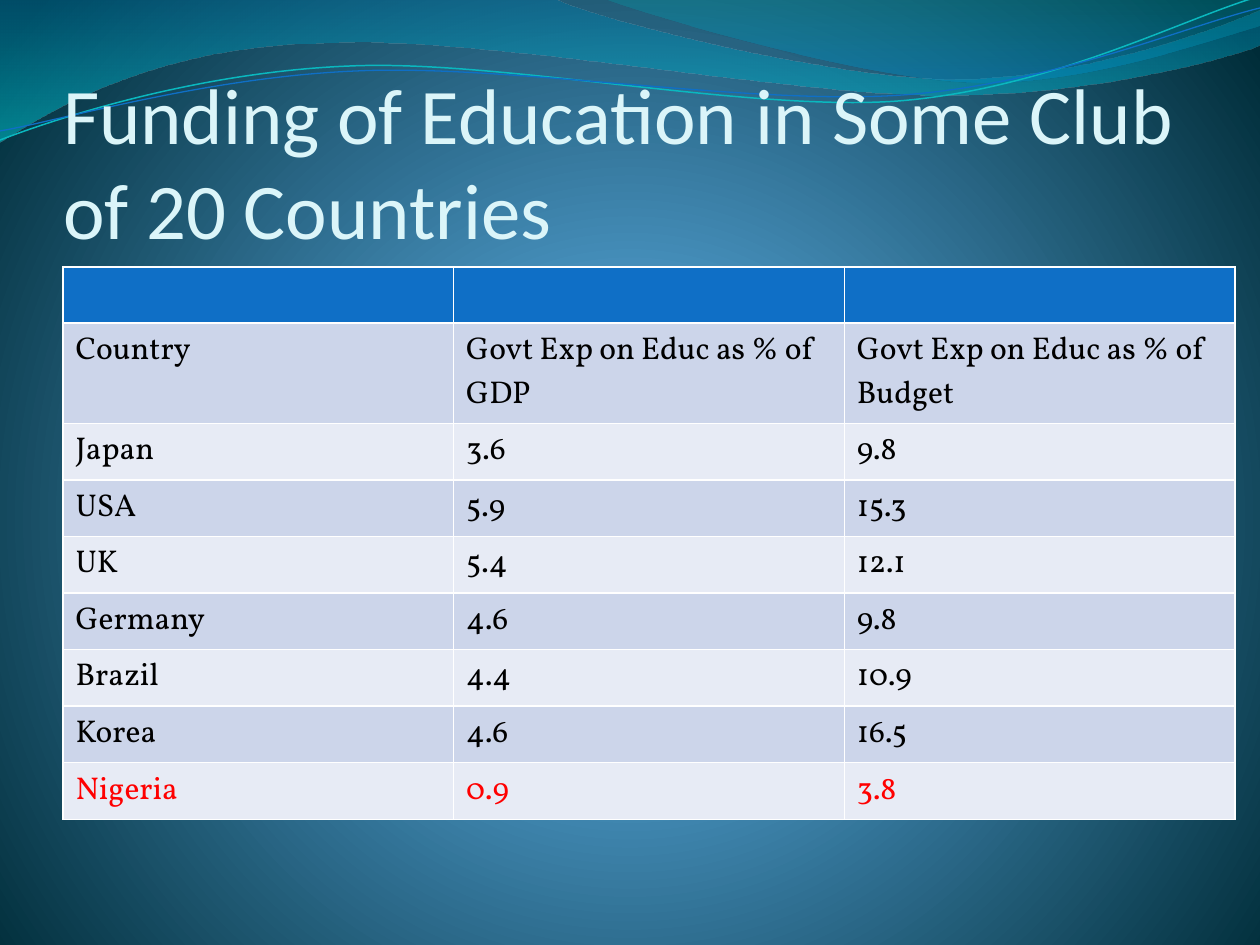
from dataclasses import dataclass

from lxml import etree
from pptx import Presentation
from pptx.dml.color import RGBColor
from pptx.enum.text import MSO_ANCHOR, PP_ALIGN
from pptx.oxml import parse_xml
from pptx.oxml.ns import nsdecls, qn
from pptx.util import Pt

LEFT, BOTTOM = PP_ALIGN.LEFT, MSO_ANCHOR.BOTTOM
EMU_PER_PX = 914400 / 126
TITLE_ONLY = 5


@dataclass(frozen=True)
class Theme:
    title_font: str = "Calibri"
    body_font: str = "Vollkorn"
    title_size: int = 45
    body_size: int = 18
    title: str = "DBF5F9"
    text: str = "000000"
    highlight: str = "FF0000"
    header: str = "0F6FC6"
    bands: tuple = ("CCD5EA", "E7EBF5")
    border: str = "FFFFFF"
    border_width: int = 1
    # Gradient stops: position, colour, opacity, all but colour in percent
    backdrop: tuple = ((0, "4AA0D6", 100), (25, "4C98C7", 100), (100, "002C38", 100))
    wide_wave: tuple = ((0, "0074A1", 45), (100, "00C6CF", 55))
    right_wave: tuple = ((0, "00A1A9", 30), (80, "008BBF", 45))
    teal_line: str = "0AB8BF"
    blue_line: str = "0F6FC6"


THEME = Theme()

# Outlines: a start point, then a line to one point or a curve through three
WIDE_WAVE = [
    [(0, 0)], [(554, -1)],
    [(600, 21), (837, 79), (955, 79)], [(1075, 79), (1207, 33), (1260, 11)],
    [(1261, 45)],
    [(1239, 55), (1096, 96), (940, 95)], [(784, 95), (481, 35), (324, 43)],
    [(163, 45), (58, 105), (-1, 142)],
]
RIGHT_WAVE = [
    [(604, -1)],
    [(641, 14), (859, 78), (969, 82)], [(1079, 87), (1211, 40), (1260, 26)],
    [(1260, 0)],
]
TEAL_LINE = [
    [(0, 140)], [(60, 117), (199, 72), (349, 66)],
    [(498, 59), (747, 112), (898, 101)], [(1050, 89), (1182, 19), (1257, -3)],
]
BLUE_LINE = [
    [(0, 131)], [(59, 121), (207, 77), (357, 71)],
    [(508, 64), (752, 106), (903, 95)], [(1053, 84), (1186, 26), (1260, 8)],
]

FUNDING = [
    ("Country", "Govt Exp on Educ as % of GDP", "Govt Exp on Educ as % of Budget"),
    ("Japan", "3.6", "9.8"),
    ("USA", "5.9", "15.3"),
    ("UK", "5.4", "12.1"),
    ("Germany", "4.6", "9.8"),
    ("Brazil", "4.4", "10.9"),
    ("Korea", "4.6", "16.5"),
    ("Nigeria", "0.9", "3.8"),
]


def px(length):
    return round(length * EMU_PER_PX)


def rgb(colour):
    return RGBColor.from_string(colour)


def gradient(stops, direction):
    stop_xml = "".join(
        f'<a:gs pos="{pos * 1000}"><a:srgbClr val="{colour}">'
        f'<a:alpha val="{opacity * 1000}"/></a:srgbClr></a:gs>'
        for pos, colour, opacity in stops)
    return parse_xml(f'<a:gradFill {nsdecls("a")} rotWithShape="1">'
                     f'<a:gsLst>{stop_xml}</a:gsLst>{direction}</a:gradFill>')


def add_run(paragraph, text, font, size, colour):
    run = paragraph.add_run()
    run.text = text
    run.font.name, run.font.size = font, Pt(size)
    run.font.color.rgb = rgb(colour)


def add_outline(slide, box, segments, closed):
    """Build a freeform whose three-point segments are Bézier curves."""
    left, top = box[:2]
    points = [(left + x, top + y) for segment in segments for x, y in segment]
    builder = slide.shapes.build_freeform(*points[0], scale=EMU_PER_PX)
    builder.add_line_segments(points[1:], close=closed)
    shape = builder.convert_to_shape()
    shape.shadow.inherit = False
    steps = iter(list(shape._element.iter(qn("a:lnTo"))))
    for segment in segments[1:]:
        group = [next(steps) for _ in segment]
        if len(group) == 3:
            curve = etree.Element(qn("a:cubicBezTo"))
            group[0].addprevious(curve)
            for step in group:
                curve.append(step[0])
                step.getparent().remove(step)
    return shape


def paint_background(slide):
    slide.background.fill.solid()
    properties = slide._element.cSld.find(qn("p:bg")).find(qn("p:bgPr"))
    direction = ('<a:path path="circle"><a:fillToRect l="10000" t="110000" '
                 'r="10000" b="100000"/></a:path>')
    properties.replace(properties[0], gradient(THEME.backdrop, direction))


def add_waves(slide, box):
    # Translucent bands
    for outline, stops in ((WIDE_WAVE, THEME.wide_wave), (RIGHT_WAVE, THEME.right_wave)):
        wave = add_outline(slide, box, outline, True)
        wave.line.fill.background()
        wave.fill.solid()
        fill = wave._element.spPr.find(qn("a:solidFill"))
        fill.getparent().replace(fill, gradient(stops, '<a:lin ang="5400000" scaled="0"/>'))
    # Thin lines
    for outline, colour, width in ((TEAL_LINE, THEME.teal_line, 0.85),
                                   (BLUE_LINE, THEME.blue_line, 0.75)):
        strand = add_outline(slide, box, outline, False)
        strand.fill.background()
        strand.line.color.rgb = rgb(colour)
        strand.line.width = Pt(width)


def place_title(slide, box, text):
    title = slide.shapes.title
    title.left, title.top, title.width, title.height = map(px, box)
    slide.shapes._spTree.append(title._element)  # in front of the waves
    frame = title.text_frame
    frame.word_wrap = True
    frame.vertical_anchor = BOTTOM
    frame.margin_left = frame.margin_right = frame.margin_bottom = 0
    frame.margin_top = px(6)
    frame.paragraphs[0].alignment = LEFT
    add_run(frame.paragraphs[0], text, THEME.title_font, THEME.title_size, THEME.title)


def style_cell(cell, fill):
    properties = cell._tc.get_or_add_tcPr()
    for side in ("lnL", "lnR", "lnT", "lnB"):
        properties.append(parse_xml(
            f'<a:{side} {nsdecls("a")} w="{Pt(THEME.border_width)}"><a:solidFill>'
            f'<a:srgbClr val="{THEME.border}"/></a:solidFill></a:{side}>'))
    cell.fill.solid()
    cell.fill.fore_color.rgb = rgb(fill)


def add_funding_table(slide, box, records):
    row_count, column_count = len(records) + 1, len(records[0])
    table = slide.shapes.add_table(row_count, column_count, *map(px, box)).table
    table.horz_banding = False
    for column in table.columns:
        column.width = px(box[2] / column_count)
    for row in table.rows:
        row.height = px(box[3] / row_count)
    # Empty header band
    for cell in table.rows[0].cells:
        style_cell(cell, THEME.header)
    # Column names and countries
    for index, record in enumerate(records):
        colour = THEME.highlight if record[0] == "Nigeria" else THEME.text
        for cell, value in zip(table.rows[index + 1].cells, record):
            style_cell(cell, THEME.bands[index % 2])
            add_run(cell.text_frame.paragraphs[0], value,
                    THEME.body_font, THEME.body_size, colour)


def main():
    deck = Presentation()
    deck.slide_width, deck.slide_height = px(1260), px(945)
    slide = deck.slides.add_slide(deck.slide_layouts[TITLE_ONLY])
    paint_background(slide)
    add_waves(slide, (0, 0, 1260, 142))
    place_title(slide, (63, 97, 1134, 158),
                "Funding of Education in Some Club of 20 Countries")
    add_funding_table(slide, (63, 267, 1172, 504), FUNDING)
    deck.save("out.pptx")


if __name__ == "__main__":
    main()
